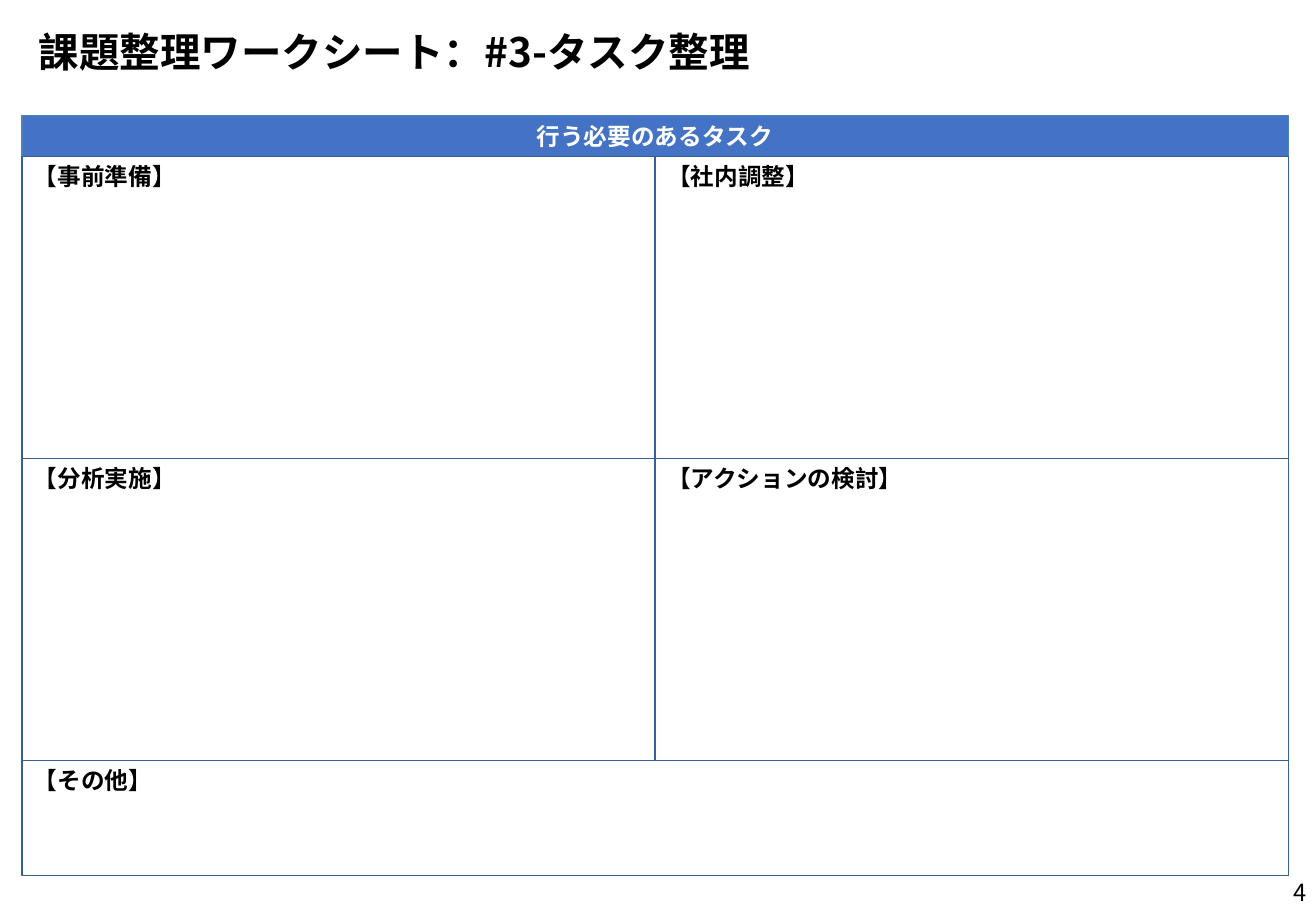
import pptx
import pptx.dml.color
import pptx.enum.shapes
import pptx.enum.text
import pptx.oxml.ns
import pptx.util
from lxml import etree

Cm = pptx.util.Cm
Pt = pptx.util.Pt
ALIGN = pptx.enum.text.PP_ALIGN
ANCHOR = pptx.enum.text.MSO_ANCHOR
FONT = "Noto Sans CJK JP"
COLORS = {
    "header": "4472C4",
    "header_line": "4F81BD",
    "area": "FFFFFF",
    "area_line": "376092",
    "text": "000000",
    "header_text": "FFFFFF",
}
FRAME_FORMAT = {"word_wrap": True, "auto_size": pptx.enum.text.MSO_AUTO_SIZE.NONE}
TASK_AREAS = [["【事前準備】", "【社内調整】"], ["【分析実施】", "【アクションの検討】"]]


def rgb(color):
    """Return the named colour."""
    return pptx.dml.color.RGBColor.from_string(COLORS[color])


def write(holder, text, size=14, bold=True, color="text", align=ALIGN.LEFT, anchor=ANCHOR.MIDDLE):
    """Write one formatted line of text into a holder."""
    frame = holder.text_frame
    for name, value in {**FRAME_FORMAT, "vertical_anchor": anchor}.items():
        setattr(frame, name, value)
    line = frame.paragraphs[0]
    line.alignment = align
    wording = line.add_run()
    wording.text = text
    for name, value in {"name": FONT, "size": Pt(size), "bold": bold}.items():
        setattr(wording.font, name, value)
    wording.font.color.rgb = rgb(color)
    properties = wording.font._element
    latin = properties.find(pptx.oxml.ns.qn("a:latin"))
    east_asian = etree.Element(pptx.oxml.ns.qn("a:ea"), typeface=FONT)
    latin.addnext(east_asian)


def add_area(slide, box, text, fill="area", **text_format):
    """Draw one outlined area of the worksheet with its heading."""
    area = slide.shapes.add_shape(pptx.enum.shapes.MSO_SHAPE.RECTANGLE, *map(Cm, box))
    area.shadow.inherit = False
    area.fill.solid()
    area.fill.fore_color.rgb = rgb(fill)
    area.line.color.rgb = rgb(f"{fill}_line")
    area.line.width = Pt(0.75)
    write(area, text, **text_format)


def add_title(slide, box):
    """Place the worksheet title in the title placeholder."""
    title = slide.shapes.title
    for name, value in zip(("left", "top", "width", "height"), box):
        setattr(title, name, Cm(value))
    write(title, "課題整理ワークシート：#3-タスク整理", size=24)


def add_worksheet(slide, box):
    """Place the header, the grid of task areas and the closing area."""
    left, top, width, height = box
    header_height, other_height = 0.86, 2.41
    area_width = width / 2
    area_height = (height - header_height - other_height) / 2
    add_area(slide, (left, top, width, header_height), "行う必要のあるタスク",
             fill="header", color="header_text", align=ALIGN.CENTER)
    for row, headings in enumerate(TASK_AREAS):
        for column, heading in enumerate(headings):
            area_box = (left + column * area_width,
                        top + header_height + row * area_height,
                        area_width, area_height)
            add_area(slide, area_box, heading, anchor=ANCHOR.TOP)
    other_box = (left, top + height - other_height, width, other_height)
    add_area(slide, other_box, "【その他】", anchor=ANCHOR.TOP)


def add_page_number(slide, box):
    """Place the page number in the lower right corner."""
    page_number = slide.shapes.add_textbox(*map(Cm, box))
    write(page_number, "4", bold=False, align=ALIGN.RIGHT)


def main():
    """Build the worksheet slide and save it."""
    deck = pptx.Presentation()
    deck.slide_width, deck.slide_height = Cm(27.51), Cm(19.05)
    slide = deck.slides.add_slide(deck.slide_layouts[5])
    add_title(slide, (0.56, 0.43, 26.42, 1.27))
    add_worksheet(slide, (0.46, 2.41, 26.47, 15.9))
    add_page_number(slide, (21.13, 18.14, 6.43, 1.02))
    deck.save("out.pptx")


if __name__ == "__main__":
    main()
